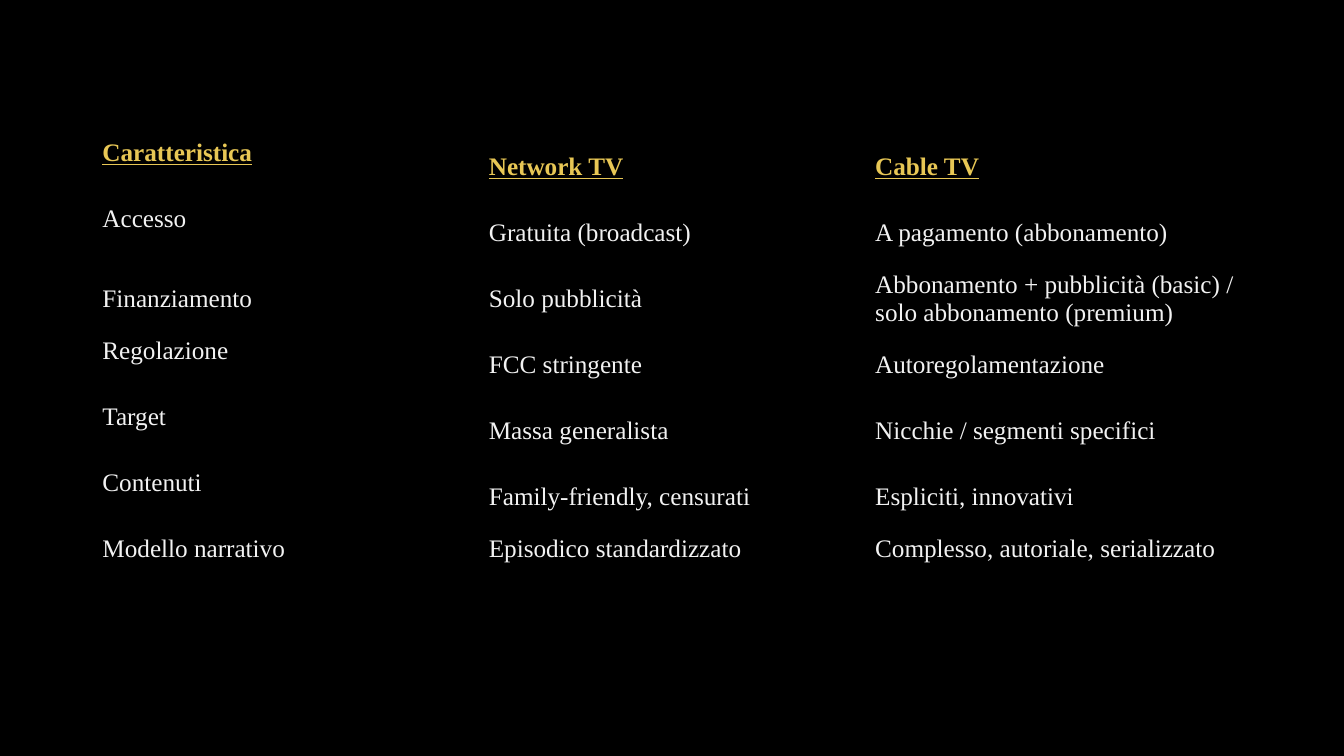
from pptx import Presentation
from pptx.dml.color import RGBColor
from pptx.enum.text import MSO_ANCHOR
from pptx.oxml.ns import qn
from pptx.util import Pt

NO_GRID_STYLE = "{2D5ABB26-0587-4C30-8999-92F81FD0307C}"
HEADINGS = ("Caratteristica", "Network TV", "Cable TV")
COMPARISON = [
    ("Accesso", "Gratuita (broadcast)", "A pagamento (abbonamento)"),
    ("Finanziamento", "Solo pubblicità",
     "Abbonamento + pubblicità (basic) / solo abbonamento (premium)"),
    ("Regolazione", "FCC stringente", "Autoregolamentazione"),
    ("Target", "Massa generalista", "Nicchie / segmenti specifici"),
    ("Contenuti", "Family-friendly, censurati", "Espliciti, innovativi"),
    ("Modello narrativo", "Episodico standardizzato",
     "Complesso, autoriale, serializzato"),
]
CENTERED_LABELS = ("Finanziamento", "Modello narrativo")


def color(hex_value):
    return RGBColor.from_string(hex_value)


class ComparisonSlide:
    base_format = {"name": "Times New Roman", "size": Pt(18)}
    heading_format = {**base_format, "bold": True, "underline": True}
    body_format = {**base_format, "bold": False, "underline": False}
    heading_color = "E8C755"
    body_color = "F2F2F2"

    def __init__(self, presentation, background):
        self.slide = presentation.slides.add_slide(presentation.slide_layouts[6])
        fill = self.slide.background.fill
        fill.solid()
        fill.fore_color.rgb = color(background)

    def table(self, left, top, column_width, row_heights, rows):
        columns = len(rows[0])
        frame = self.slide.shapes.add_table(
            len(rows), columns, Pt(left), Pt(top),
            Pt(column_width * columns), Pt(sum(row_heights)))
        grid = frame.table
        grid.first_row = grid.horz_banding = False
        grid._tbl.tblPr.find(qn("a:tableStyleId")).text = NO_GRID_STYLE
        for row_index, (height, row) in enumerate(zip(row_heights, rows)):
            grid.rows[row_index].height = Pt(height)
            for column_index, wording in enumerate(row):
                # Most row labels sit at the top of their two-line rows.
                raised = column_index == 0 and wording not in CENTERED_LABELS
                self.cell(grid.cell(row_index, column_index), wording,
                          row_index == 0, raised)

    def cell(self, cell, wording, is_heading, raised):
        cell.fill.background()
        cell.vertical_anchor = MSO_ANCHOR.TOP if raised else MSO_ANCHOR.MIDDLE
        run = cell.text_frame.paragraphs[0].add_run()
        run.text = wording
        values = self.heading_format if is_heading else self.body_format
        for attribute, value in values.items():
            setattr(run.font, attribute, value)
        run.font.color.rgb = color(
            self.heading_color if is_heading else self.body_color)


def main():
    presentation = Presentation()
    presentation.slide_width, presentation.slide_height = Pt(960), Pt(540)
    comparison_slide = ComparisonSlide(presentation, "000000")
    comparison_slide.table(
        left=66, top=96, column_width=276,
        row_heights=[47.1] * len(COMPARISON) + [27.1],
        rows=[HEADINGS, *COMPARISON])
    presentation.save("out.pptx")


if __name__ == "__main__":
    main()
